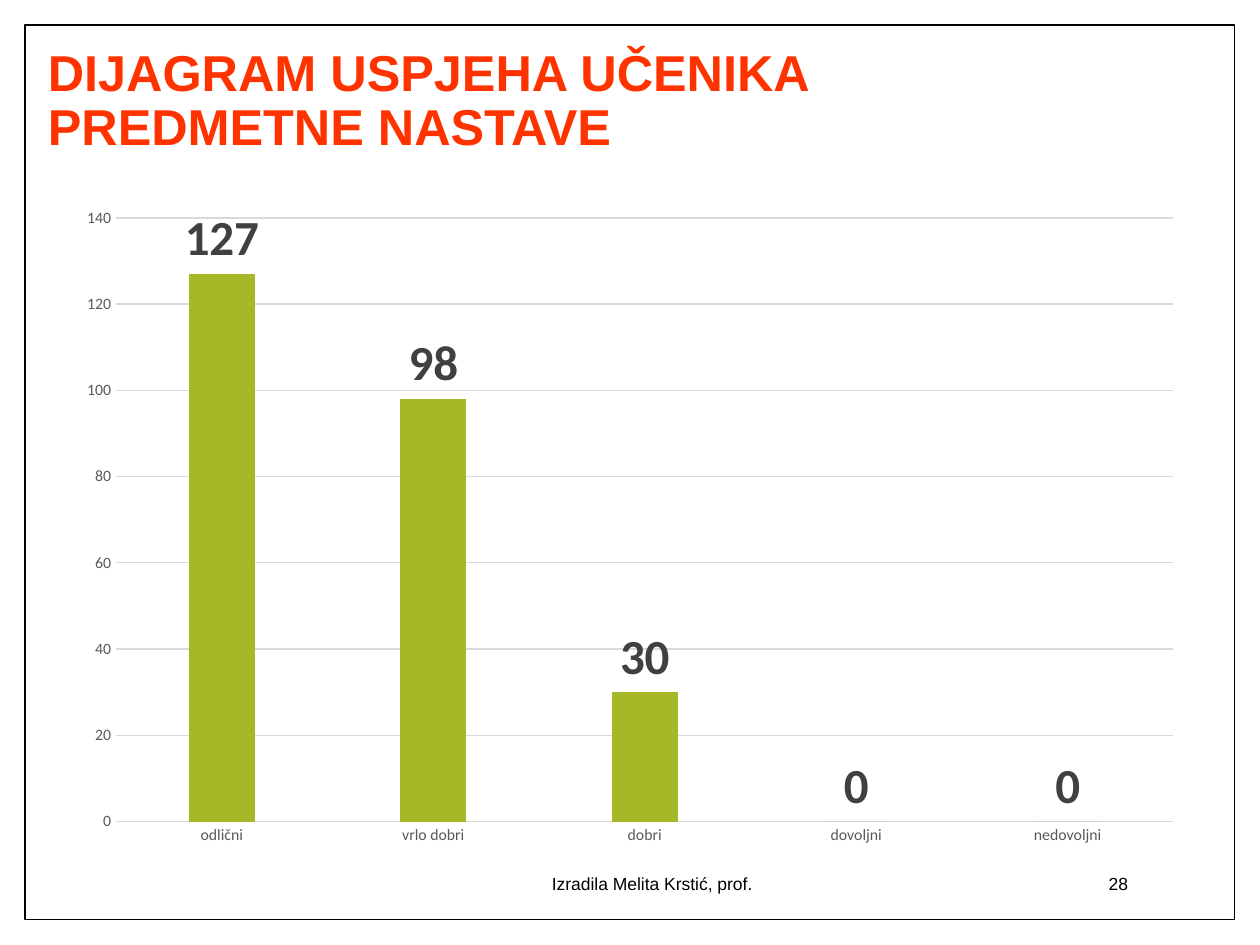
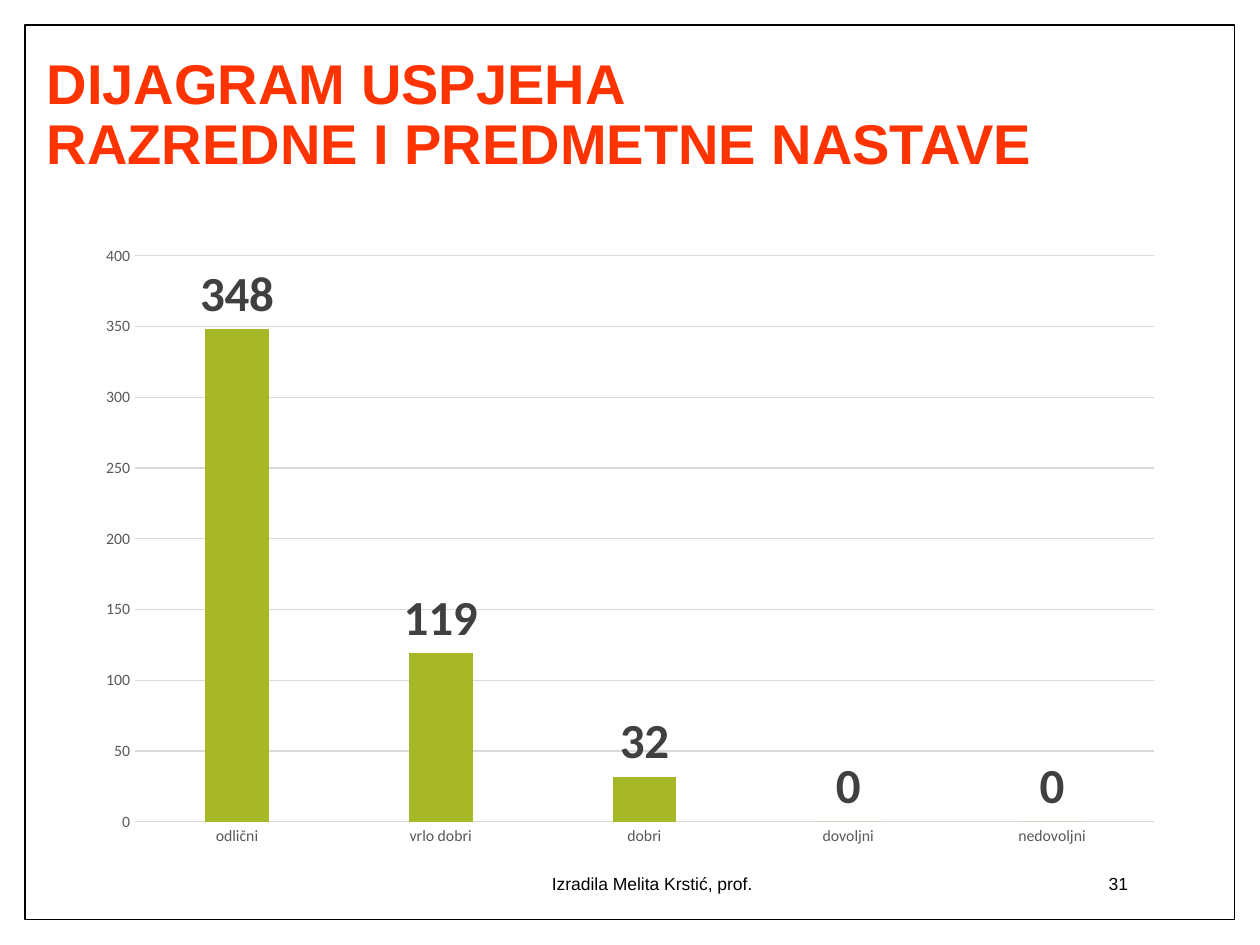
from dataclasses import dataclass

from lxml import etree
from pptx import Presentation
from pptx.chart.data import CategoryChartData
from pptx.dml.color import RGBColor
from pptx.enum.chart import XL_CHART_TYPE, XL_LABEL_POSITION, XL_TICK_MARK
from pptx.enum.shapes import MSO_SHAPE
from pptx.enum.text import MSO_ANCHOR, MSO_AUTO_SIZE, PP_ALIGN
from pptx.util import Cm, Pt

COLUMNS = XL_CHART_TYPE.COLUMN_CLUSTERED
OUTSIDE_END = XL_LABEL_POSITION.OUTSIDE_END
NO_TICK = XL_TICK_MARK.NONE
MIDDLE = MSO_ANCHOR.MIDDLE
LEFT, CENTER, RIGHT = PP_ALIGN.LEFT, PP_ALIGN.CENTER, PP_ALIGN.RIGHT

GRADES = ["odlični", "vrlo dobri", "dobri", "dovoljni", "nedovoljni"]
AUTHOR = "Izradila Melita Krstić, prof."

# Boxes are left, top, width, height in centimetres
SLIDES = [
    {
        "title": ["DIJAGRAM USPJEHA UČENIKA", "PREDMETNE NASTAVE"],
        "title_size": 28.8,
        "title_box": (0.71, 0.74, 23.8, 2.64),
        "pupils": [127, 98, 30, 0, 0],
        "axis_max": 140,
        "axis_step": 20,
        "chart_box": (1.3, 3.94, 22.81, 13.36),
        "number": 28,
    },
    {
        "title": ["DIJAGRAM USPJEHA", "RAZREDNE I PREDMETNE NASTAVE"],
        "title_size": 32,
        "title_box": (0.69, 0.76, 24.21, 3.18),
        "pupils": [348, 119, 32, 0, 0],
        "axis_max": 400,
        "axis_step": 50,
        "chart_box": (1.7, 4.72, 22, 12.57),
        "number": 31,
    },
]

SLIDE_SIZE = (25.4, 19.05)
FRAME_MARGIN = 0.51
FOOTER_BOX = (8.23, 17.3, 9.83, 1.02)
NUMBER_BOX = (19.43, 17.3, 3.56, 1.02)


@dataclass(frozen=True)
class Theme:
    title: RGBColor = RGBColor.from_string("FF3300")
    ink: RGBColor = RGBColor.from_string("000000")
    paper: RGBColor = RGBColor.from_string("FFFFFF")
    bar: RGBColor = RGBColor.from_string("A6B727")
    grid: RGBColor = RGBColor.from_string("D9D9D9")
    axis_text: RGBColor = RGBColor.from_string("595959")
    value_text: RGBColor = RGBColor.from_string("404040")
    text_font: str = "Arial"
    chart_font: str = "Calibri"
    footer_size: float = 10
    chart_size: float = 10
    axis_size: float = 9
    value_size: float = 28
    frame_width: float = 1
    grid_width: float = 0.75


THEME = Theme()


def cm_box(box):
    return [Cm(length) for length in box]


def style_font(font, name, size, color, bold=False):
    font.name, font.size, font.bold = name, Pt(size), bold
    font.color.rgb = color


def style_line(line, color, width):
    line.color.rgb = color
    line.width = Pt(width)


def fill_text(tf, text, size, color, align, bold=False):
    tf.word_wrap = True
    tf.auto_size = MSO_AUTO_SIZE.NONE
    tf.vertical_anchor = MIDDLE
    tf.text = text
    p = tf.paragraphs[0]
    p.alignment = align
    for r in p.runs:
        style_font(r.font, THEME.text_font, size, color, bold)


def add_title(slide, content):
    title = slide.shapes.title
    title.left, title.top, title.width, title.height = cm_box(content["title_box"])
    tf = title.text_frame
    fill_text(tf, "\v".join(content["title"]), content["title_size"],
              THEME.title, LEFT, bold=True)
    tf.paragraphs[0].line_spacing = 0.9


def add_frame(slide):
    """Put the bordered page frame behind the title."""
    width, height = (side - 2 * FRAME_MARGIN for side in SLIDE_SIZE)
    sp = slide.shapes.add_shape(
        MSO_SHAPE.RECTANGLE, *cm_box((FRAME_MARGIN, FRAME_MARGIN, width, height)))
    sp.shadow.inherit = False
    sp.fill.solid()
    sp.fill.fore_color.rgb = THEME.paper
    style_line(sp.line, THEME.ink, THEME.frame_width)
    slide.shapes.title.element.addprevious(sp.element)


def add_footer(slide, number):
    for box, text, align in ((FOOTER_BOX, AUTHOR, CENTER),
                             (NUMBER_BOX, str(number), RIGHT)):
        sp = slide.shapes.add_textbox(*cm_box(box))
        fill_text(sp.text_frame, text, THEME.footer_size, THEME.ink, align)


def style_axis(axis):
    axis.major_tick_mark = axis.minor_tick_mark = NO_TICK
    style_font(axis.tick_labels.font, THEME.chart_font, THEME.axis_size,
               THEME.axis_text)


def add_grade_chart(slide, content):
    data = CategoryChartData()
    data.categories = GRADES
    data.add_series("Series 1", content["pupils"])
    chart = slide.shapes.add_chart(COLUMNS, *cm_box(content["chart_box"]), data).chart
    chart.has_legend = chart.has_title = False
    style_font(chart.font, THEME.chart_font, THEME.chart_size, THEME.ink)

    grades, counts = chart.category_axis, chart.value_axis
    style_axis(grades)
    style_axis(counts)
    style_line(grades.format.line, THEME.grid, THEME.grid_width)
    counts.format.line.fill.background()
    style_line(counts.major_gridlines.format.line, THEME.grid, THEME.grid_width)
    counts.minimum_scale = 0
    counts.maximum_scale = content["axis_max"]
    counts.major_unit = content["axis_step"]

    plot = chart.plots[0]
    plot.vary_by_categories = False
    plot.gap_width, plot.overlap = 219, -27
    series = plot.series[0]
    series.format.fill.solid()
    series.format.fill.fore_color.rgb = THEME.bar
    labels = series.data_labels
    labels.show_value = True
    labels.position = OUTSIDE_END
    style_font(labels.font, THEME.chart_font, THEME.value_size,
               THEME.value_text, bold=True)


def main():
    prs = Presentation()
    prs.slide_width, prs.slide_height = cm_box(SLIDE_SIZE)
    title_only = prs.slide_layouts.get_by_name("Title Only")
    for content in SLIDES:
        slide = prs.slides.add_slide(title_only)
        add_title(slide, content)
        add_frame(slide)
        add_footer(slide, content["number"])
        add_grade_chart(slide, content)
    prs.save("out.pptx")


if __name__ == "__main__":
    main()
